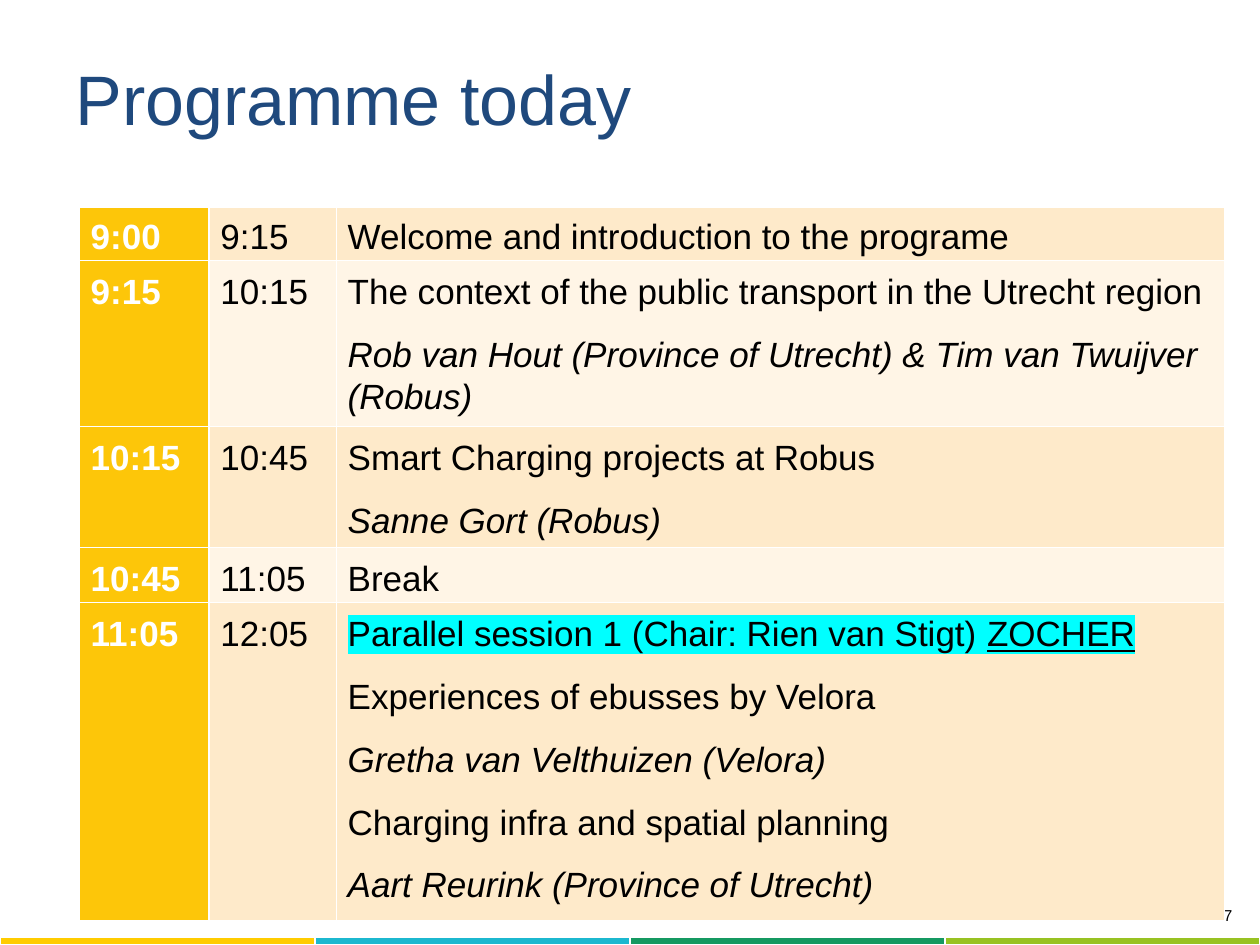
from dataclasses import dataclass
import pptx
import pptx.dml.color
import pptx.enum.text
import pptx.oxml.ns
import pptx.util
from lxml import etree
from pptx.util import Inches


@dataclass
class Theme:
    font: str = "Arial"
    title: str = "1F497D"
    text: str = "000000"
    white: str = "FFFFFF"
    time: str = "FDC609"
    bands: tuple = ("FEEACA", "FFF5E6")
    highlight: str = "00FFFF"
    stripe: tuple = ("FFCC00", "1CB8CF", "159961", "98C222")
    title_size: int = 40
    body_size: int = 20
    number_size: int = 9


theme = Theme()
qn = pptx.oxml.ns.qn


def add_run(paragraph, text, size, color, bold=False, italic=False):
    run = paragraph.add_run()
    run.text = text
    run.font.name = theme.font
    run.font.size = pptx.util.Pt(size)
    run.font.bold = bold
    run.font.italic = italic
    run.font.color.rgb = pptx.dml.color.RGBColor.from_string(color)
    return run


def style_cell(cell, fill, borders):
    properties = cell._tc.get_or_add_tcPr()
    for side, width in borders.items():
        line = etree.SubElement(properties, qn(f"a:ln{side}"), w=str(pptx.util.Pt(width)))
        solid = etree.SubElement(line, qn("a:solidFill"))
        etree.SubElement(solid, qn("a:srgbClr"), val=theme.white)
    cell.fill.solid()
    cell.fill.fore_color.rgb = pptx.dml.color.RGBColor.from_string(fill)


presentation = pptx.Presentation()
presentation.slide_width = Inches(10)
presentation.slide_height = Inches(7.5)
slide = presentation.slides.add_slide(presentation.slide_layouts[5])

stripe = slide.shapes.add_table(1, 4, Inches(0), Inches(7.44), Inches(10), Inches(0.06)).table
stripe.first_row = False
stripe.horz_banding = False
for cell, color in zip(stripe.iter_cells(), theme.stripe):
    cell.margin_top = cell.margin_bottom = 0
    style_cell(cell, color, {})
    etree.SubElement(cell.text_frame.paragraphs[0]._p, qn("a:endParaRPr"), sz="100")

number = slide.shapes.add_textbox(Inches(7.91), Inches(7.14), Inches(1.97), Inches(0.31))
number.text_frame.word_wrap = True
paragraph = number.text_frame.paragraphs[0]
paragraph.alignment = pptx.enum.text.PP_ALIGN.RIGHT
add_run(paragraph, "7", theme.number_size, theme.text)

title = slide.shapes.title
title.left, title.top, title.width, title.height = Inches(0.5), Inches(0.47), Inches(9), Inches(0.61)
frame = title.text_frame
frame.auto_size = pptx.enum.text.MSO_AUTO_SIZE.NONE
frame.vertical_anchor = pptx.enum.text.MSO_ANCHOR.MIDDLE
frame.margin_left = frame.margin_right = frame.margin_top = frame.margin_bottom = Inches(0.1)
paragraph = frame.paragraphs[0]
paragraph.alignment = pptx.enum.text.PP_ALIGN.LEFT
add_run(paragraph, "Programme today", theme.title_size, theme.title)

sessions = [
    ("9:00", "9:15", 0.42, [("Welcome and introduction to the programe", "")]),
    ("9:15", "10:15", 1.26, [
        ("The context of the public transport in the Utrecht region", ""),
        ("Rob van Hout (Province of Utrecht) & Tim van Twuijver (Robus)", "italic")]),
    ("10:15", "10:45", 0.93, [
        ("Smart Charging projects at Robus", ""),
        ("Sanne Gort (Robus)", "italic")]),
    ("10:45", "11:05", 0.43, [("Break", "")]),
    ("11:05", "12:05", 2.42, [
        ("Parallel session 1 (Chair: Rien van Stigt) |ZOCHER", "highlight"),
        ("Experiences of ebusses by Velora", ""),
        ("Gretha van Velthuizen (Velora)", "italic"),
        ("Charging infra and spatial planning", ""),
        ("Aart Reurink (Province of Utrecht)", "italic")]),
]

programme = slide.shapes.add_table(
    len(sessions) + 1, 3, Inches(0.63), Inches(1.18), Inches(9.09), Inches(5.91)).table
programme.first_row = False
programme.horz_banding = False
for column, width in zip(programme.columns, (1.03, 1.01, 7.05)):
    column.width = Inches(width)
programme.rows[0].height = Inches(0.45)
for cell in programme.rows[0].cells:
    style_cell(cell, theme.white, {"L": 1, "R": 1, "T": 1, "B": 3})

for index, (start, end, height, lines) in enumerate(sessions):
    row = programme.rows[index + 1]
    row.height = Inches(height)
    band = theme.bands[index % 2]
    contents = ([(start, "bold")], [(end, "")], lines)
    for cell, fill, content in zip(row.cells, (theme.time, band, band), contents):
        style_cell(cell, fill, {"L": 1, "R": 1, "T": 3 if index == 0 else 1, "B": 1})
        cell.margin_left = cell.margin_right = Inches(0.09)
        cell.margin_top = Inches(0.08)
        cell.margin_bottom = 0
        for position, (text, style) in enumerate(content):
            if position == 0:
                paragraph = cell.text_frame.paragraphs[0]
            else:
                paragraph = cell.text_frame.add_paragraph()
                paragraph.space_before = pptx.util.Pt(12)
            paragraph.line_spacing = 1.07
            color = theme.white if style == "bold" else theme.text
            for part, piece in enumerate(text.split("|")):
                run = add_run(paragraph, piece, theme.body_size, color,
                              style == "bold", style == "italic")
                if style == "highlight":
                    run.font.underline = part == 1
                    highlight = etree.Element(qn("a:highlight"))
                    etree.SubElement(highlight, qn("a:srgbClr"), val=theme.highlight)
                    run._r.rPr.find(qn("a:solidFill")).addnext(highlight)

presentation.save("out.pptx")
